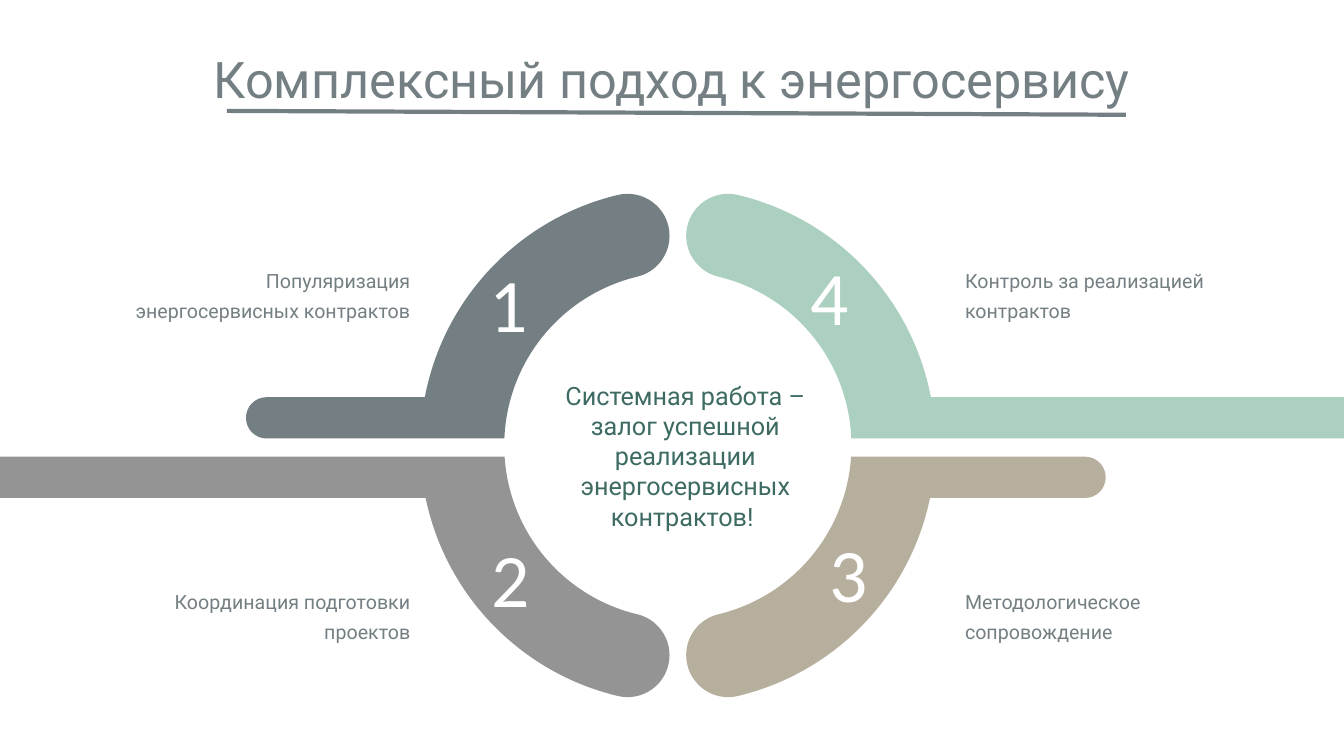
import math
import lxml.etree
import pptx
import pptx.util
import pptx.dml.color
import pptx.enum.shapes
import pptx.enum.text
import pptx.oxml

Pt = pptx.util.Pt
ALIGN = pptx.enum.text.PP_ALIGN
FIT = pptx.enum.text.MSO_AUTO_SIZE
SPACE = "http://schemas.openxmlformats.org/drawingml/2006/main"
HUES = {
    "slate": "747F83",
    "mint": "ABD0BF",
    "gray": "949494",
    "sand": "B6AF9D",
    "pine": "3D6B63",
    "white": "FFFFFF",
}
MID = (484.2, 318.2)
OUTER, INNER, BAR = 184, 124, 29.5
TURN = math.radians(76.5)
LABEL = {"line_spacing": Pt(21.6), "space_before": Pt(10)}


def color(name):
    return pptx.dml.color.RGBColor.from_string(HUES[name])


def apply(item, values):
    for key, value in values.items():
        setattr(item, key, value)


def curve(x, y, radius, start, stop):
    pull = 4 / 3 * math.tan((stop - start) / 4)
    cos, sin = math.cos, math.sin
    spots = [
        (cos(start) - pull * sin(start), sin(start) + pull * cos(start)),
        (cos(stop) + pull * sin(stop), sin(stop) - pull * cos(stop)),
        (cos(stop), sin(stop)),
    ]
    return [(x + radius * u, y + radius * v) for u, v in spots]


def trace(gap, reach, is_round):
    edge, half, right = gap + BAR, BAR / 2, math.pi / 2
    core, cap = (OUTER + INNER) / 2, (OUTER - INNER) / 2
    hub = (core * math.cos(TURN), core * math.sin(TURN), cap)
    parts = [curve(0, 0, OUTER, TURN, math.asin(edge / OUTER))]
    if is_round:
        bend = (reach - half, gap + half, half)
        parts += [[(reach - half, edge)], curve(*bend, right, 0), curve(*bend, 0, -right)]
    else:
        parts += [[(reach, edge)], [(reach, gap)]]
    low = math.asin(gap / INNER)
    parts += [
        [(INNER * math.cos(low), gap)],
        curve(0, 0, INNER, low, TURN),
        curve(*hub, TURN + math.pi, math.pi),
        curve(*hub, math.pi, right),
        curve(*hub, right, TURN),
    ]
    return parts


def bend_lines(shape, parts):
    lines = iter(list(shape._element.iter(f"{{{SPACE}}}lnTo")))
    for part in parts:
        group = [next(lines) for _ in part]
        if len(group) == 3:
            bezier = lxml.etree.Element(f"{{{SPACE}}}cubicBezTo")
            group[0].addprevious(bezier)
            for line in group:
                bezier.append(line[0])
                line.getparent().remove(line)


def add_arm(slide, side, level, gap, reach, is_round, hue):
    parts = trace(gap, reach, is_round)
    spots = [(Pt(MID[0] + side * x), Pt(MID[1] + level * y))
             for part in parts for x, y in part]
    form = slide.shapes.build_freeform(*spots[-1])
    form.add_line_segments(spots, close=True)
    shape = form.convert_to_shape()
    bend_lines(shape, parts)
    shape.shadow.inherit = False
    shape.fill.solid()
    shape.fill.fore_color.rgb = color(hue)
    shape.line.fill.background()


def add_text(slide, text, place, size, hue, face="Roboto", align=ALIGN.LEFT,
             style=None, fit=FIT.SHAPE_TO_FIT_TEXT):
    box = slide.shapes.add_textbox(*map(Pt, place))
    apply(box.text_frame, {"word_wrap": True, "auto_size": fit})
    para = box.text_frame.paragraphs[0]
    apply(para, {"alignment": align, **(style or {})})
    run = para.add_run()
    run.text = text
    apply(run.font, {"size": Pt(size), "name": face})
    run.font.color.rgb = color(hue)


def add_rule(slide, start, end):
    rule = slide.shapes.add_connector(
        pptx.enum.shapes.MSO_CONNECTOR.STRAIGHT, *map(Pt, start + end))
    rule.line.color.rgb = color("slate")
    rule.line.width = Pt(3)
    rule._element.spPr.append(pptx.oxml.parse_xml(f'<a:effectLst xmlns:a="{SPACE}"/>'))


def main():
    deck = pptx.Presentation()
    apply(deck, {"slide_width": Pt(960), "slide_height": Pt(540)})
    slide = deck.slides.add_slide(deck.slide_layouts[6])

    arms = [
        (1, -1, 5, 475.8, False, "mint"),
        (-1, 1, 8, 484.2, False, "gray"),
        (-1, -1, 5, 308.5, True, "slate"),
        (1, 1, 8, 305.6, True, "sand"),
    ]
    for arm in arms:
        add_arm(slide, *arm)

    labels = [
        ("Популяризация энергосервисных контрактов", "Координация подготовки проектов"),
        ("Контроль за реализацией контрактов", "Методологическое сопровождение"),
    ]
    sides = [(83.5, ALIGN.RIGHT), (682.2, ALIGN.LEFT)]
    for (left, align), pair in zip(sides, labels):
        for top, text in zip((183.6, 413), pair):
            add_text(slide, text, (left, top, 216.7, 65.5), 14, "slate",
                     align=align, style=LABEL, fit=FIT.NONE)

    add_text(slide, "Комплексный подход к энергосервису", (54, 31, 851.8, 51),
             36, "slate", align=ALIGN.CENTER)
    add_rule(slide, (162, 79.2), (804.2, 82))
    add_text(slide, "Системная работа – залог успешной реализации энергосервисных контрактов! ",
             (381.2, 267.8, 216.7, 116.6), 18, "pine", align=ALIGN.CENTER)

    digits = [(342.7, 180), (344.2, 376.6), (585.4, 373), (571.7, 175)]
    for number, spot in enumerate(digits, 1):
        add_text(slide, str(number), spot + (38.9, 72.7), 54, "white", "Calibri")

    deck.save("out.pptx")


if __name__ == "__main__":
    main()
